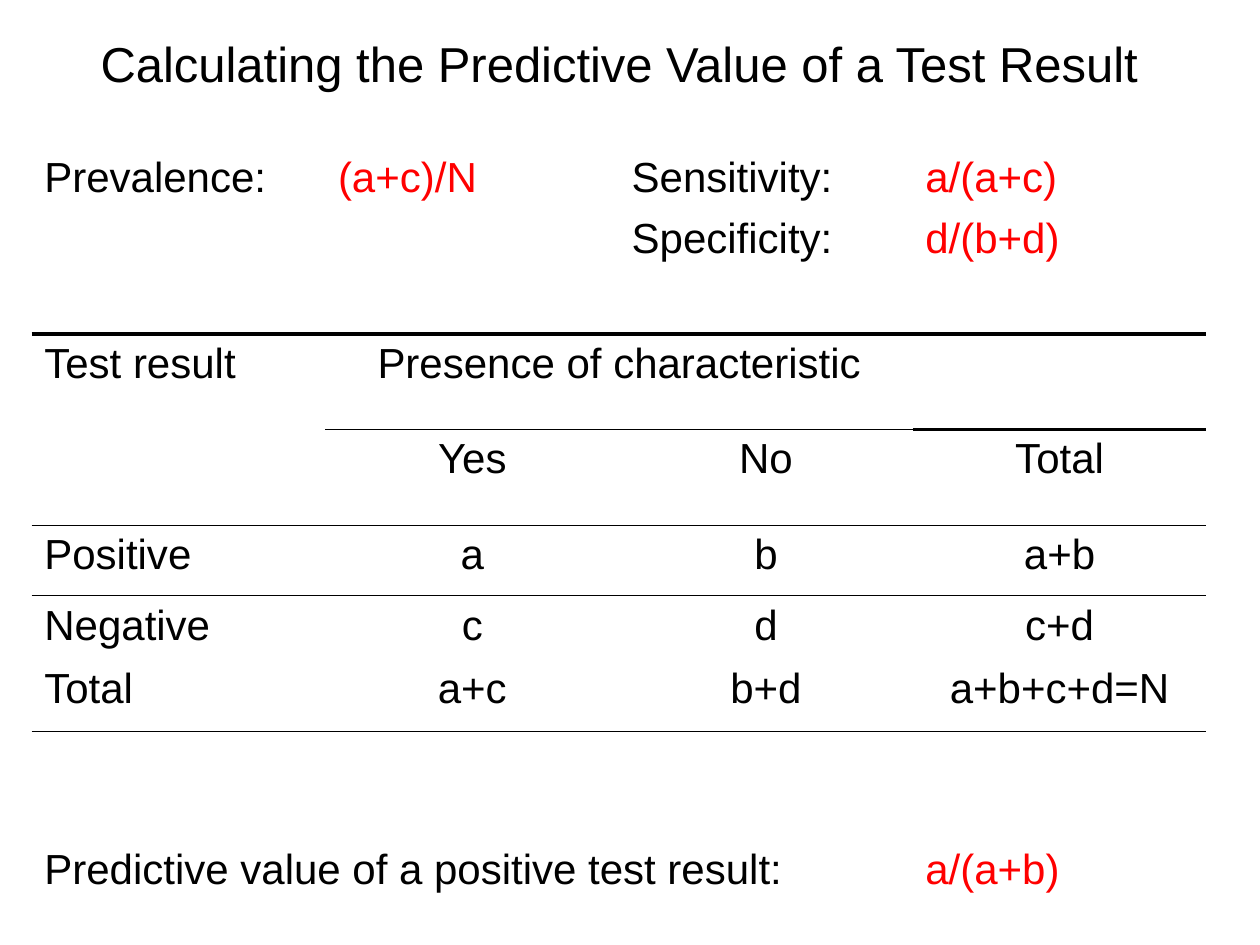
from pptx import Presentation
from pptx import util as u
from pptx.dml.color import RGBColor
from pptx.enum import text
from pptx.oxml import parse_xml
from pptx.oxml.ns import nsdecls, qn

ROWS = [
    (2.34, ["Calculating the Predictive Value of a Test Result", "", "", ""]),
    (1.24, ["Prevalence:", "(a+c)/N", "Sensitivity:", "a/(a+c)"]),
    (2.51, ["", "", "Specificity:", "d/(b+d)"]),
    (1.93, ["Test result", "Presence of characteristic", "", ""]),
    (1.93, ["", "Yes", "No", "Total"]),
    (1.42, ["Positive", "a", "b", "a+b"]),
    (1.27, ["Negative", "c", "d", "c+d"]),
    (1.47, ["Total", "a+c", "b+d", "a+b+c+d=N"]),
    (3.38, ["Predictive value of a positive test result:", "", "", "a/(a+b)"]),
]
SPANS = [((0, 0), (0, 3)), ((3, 0), (4, 0)), ((3, 1), (3, 2)), ((8, 0), (8, 2))]
RULES = [(2, 0, 3, 2.25), (3, 0, 2, 0.5), (4, 0, 3, 0.5), (7, 0, 3, 0.5)]
GRID = range(3, 8)
LAST = len(ROWS) - 1
THEME = {"font": "Arial", "title": 28, "body": 24, "ink": "000000", "key": "FF0000"}
PLAIN = "{2D5ABB26-0587-4C30-8999-92F81FD0307C}"
LEFT, TOP, WIDE = 0.64, 0.64, 5.92


def edge(cell, side, size):
    cell._tc.get_or_add_tcPr().append(parse_xml(
        f'<a:{side} {nsdecls("a")} w="{u.Pt(size)}"><a:solidFill>'
        f'<a:srgbClr val="{THEME["ink"]}"/></a:solidFill></a:{side}>'))


def border(cell, row, col):
    for side, above in (("lnT", row - 1), ("lnB", row)):
        for line, first, last, size in RULES:
            if line == above and first <= col <= last:
                edge(cell, side, size)


def write(cell, words, row, col):
    para = cell.text_frame.paragraphs[0]
    mid = row == 0 or (row in GRID and col > 0)
    para.alignment = text.PP_ALIGN.CENTER if mid else text.PP_ALIGN.LEFT
    run = para.add_run()
    run.text = words
    run.font.name = THEME["font"]
    run.font.size = u.Pt(THEME["body" if row else "title"])
    run.font.color.rgb = RGBColor.from_string(THEME["key" if "/" in words else "ink"])


def main():
    deck = Presentation()
    deck.slide_width, deck.slide_height = u.Cm(25.4), u.Cm(19.05)
    slide = deck.slides.add_slide(deck.slide_layouts[6])
    high = sum(size for size, _ in ROWS)
    table = slide.shapes.add_table(
        len(ROWS), 4, u.Cm(LEFT), u.Cm(TOP), u.Cm(4 * WIDE), u.Cm(high)).table
    table.first_row = table.horz_banding = False
    table._tbl.tblPr.find(qn("a:tableStyleId")).text = PLAIN
    for col in table.columns:
        col.width = u.Cm(WIDE)
    for start, end in SPANS:
        table.cell(*start).merge(table.cell(*end))
    for row, (size, cells) in enumerate(ROWS):
        table.rows[row].height = u.Cm(size)
        for col, words in enumerate(cells):
            cell = table.cell(row, col)
            border(cell, row, col)
            cell.fill.background()
            if row == LAST:
                cell.vertical_anchor = text.MSO_ANCHOR.BOTTOM
            if words:
                write(cell, words, row, col)
    deck.save("out.pptx")


if __name__ == "__main__":
    main()
